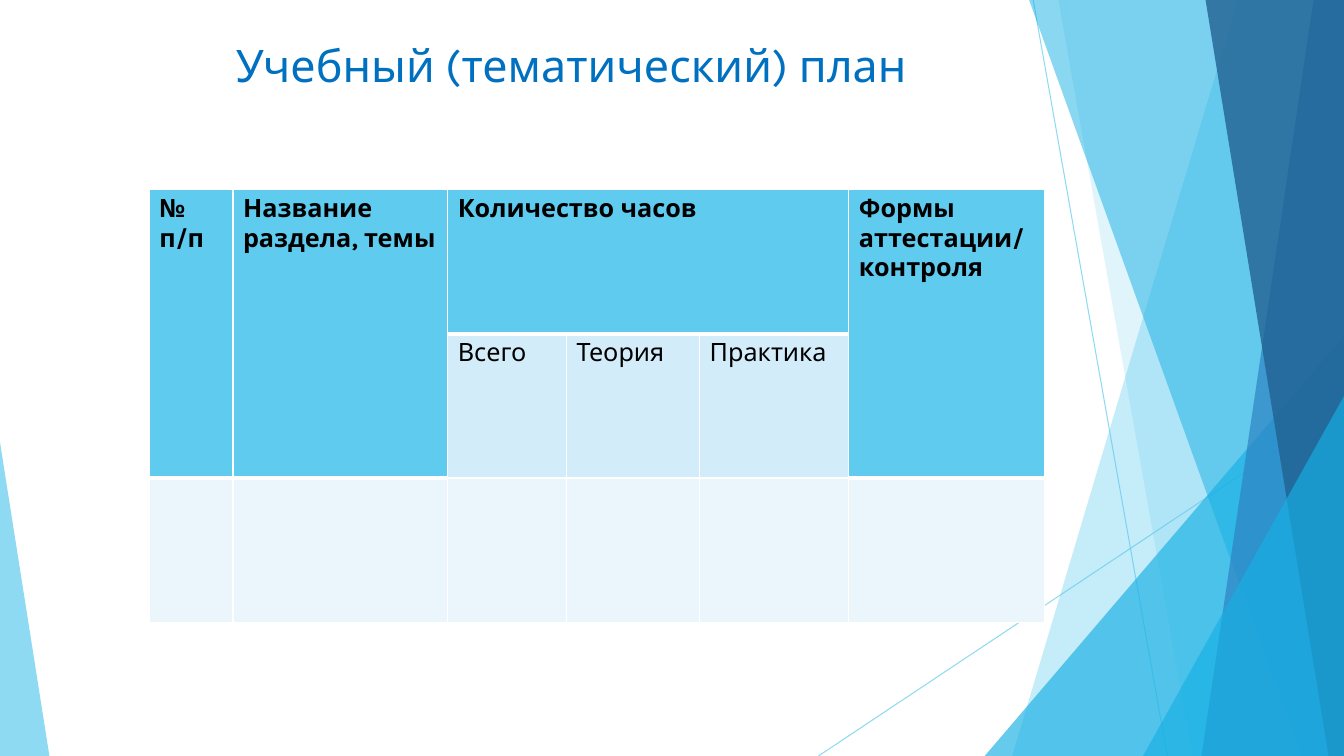
from lxml.etree import SubElement
from pptx import Presentation
from pptx.dml.color import RGBColor
from pptx.enum.shapes import MSO_CONNECTOR, MSO_SHAPE
from pptx.enum.text import PP_ALIGN
from pptx.oxml.ns import qn
from pptx.util import Pt

COLORS = {
    "sky": "5FCBEF", "cyan": "17B0E4", "blue": "2E83C3", "navy": "226292",
    "title": "0070C0", "ink": "000000", "white": "FFFFFF",
    "band": "D2ECF9", "pale": "EAF6FC",
}
WIDE, HIGH = 960, 540


def paint(fill, name, alpha):
    """Give a solid fill whose opacity is alpha percent."""
    fill.solid()
    fill.fore_color.rgb = RGBColor.from_string(COLORS[name])
    tint = fill._xPr.find(qn("a:solidFill"))[0]
    SubElement(tint, qn("a:alpha"), val=str(alpha * 1000))


def write(para, text, look):
    run = para.add_run()
    run.text = text
    run.font.color.rgb = RGBColor.from_string(COLORS[look["color"]])
    for key, value in look["font"].items():
        setattr(run.font, key, value)


deck = Presentation()
deck.slide_width, deck.slide_height = Pt(WIDE), Pt(HIGH)
slide = deck.slides.add_slide(deck.slide_layouts[6])
shapes = slide.shapes

# Thin crossing lines
for ends in [(738, 0, 833.8, HIGH), (WIDE, 290.2, 584.6, HIGH)]:
    line = shapes.add_connector(MSO_CONNECTOR.STRAIGHT, *map(Pt, ends))
    line.line.width = Pt(0.75)
    paint(line.line.fill, "sky", 70)
    SubElement(line._element.spPr, qn("a:effectLst"))

# Facets: a leaf has top and bottom x, a peak has left, top, width and apex
facets = [
    ("leaf", (884.2, 723), "sky", 36),
    ("leaf", (756, 851.8), "sky", 20),
    ("peak", (703.4, 239.8, 256.6, 1), "cyan", 66),
    ("leaf", (735.1, 929.5), "cyan", 50),
    ("leaf", (938.2, 858.2), "blue", 70),
    ("leaf", (861.1, 949), "navy", 80),
    ("peak", (816.5, 283, 143.5, 1), "cyan", 66),
    ("peak", (0, 316, 35.3, 0), "sky", 70),
]
for kind, place, color, alpha in facets:
    if kind == "leaf":
        top, base = place
        path = shapes.build_freeform(Pt(top), 0)
        rest = [(WIDE, 0), (WIDE, HIGH), (base, HIGH)]
        path.add_line_segments([(Pt(x), Pt(y)) for x, y in rest], close=True)
        facet = path.convert_to_shape()
    else:
        left, top, width, apex = place
        facet = shapes.add_shape(MSO_SHAPE.ISOSCELES_TRIANGLE, Pt(left),
                                 Pt(top), Pt(width), Pt(HIGH - top))
        facet.adjustments[0] = apex
    facet.shadow.inherit = False
    facet.line.fill.background()
    paint(facet.fill, color, alpha)

# Title
box = shapes.add_textbox(Pt(65.5), Pt(19.4), Pt(676.8), Pt(108))
box.text_frame.word_wrap = True
para = box.text_frame.paragraphs[0]
para.alignment = PP_ALIGN.CENTER
for text, size in [(" ", 36), ("Учебный (тематический) план", 32)]:
    write(para, text, {"color": "title",
                       "font": {"name": "Karla", "size": Pt(size)}})

# Table of hours
widths = [59.8, 153.4, 85, 95, 106.6, 139.7]
row = 103
rows = [
    ["№ п/п", "Название раздела, темы", "Количество часов", "", "",
     "Формы аттестации/\nконтроля"],
    ["", "", "Всего", "Теория", "Практика", ""],
    [""] * 6,
]
tall = (0, 1, 5)
grid = shapes.add_table(3, 6, Pt(106.6), Pt(135.4),
                        Pt(sum(widths)), Pt(3 * row)).table
for col, width in zip(grid.columns, widths):
    col.width = Pt(width)
for band in grid.rows:
    band.height = Pt(row)

for r, texts in enumerate(rows):
    for c, text in enumerate(texts):
        cell = grid.cell(r, c)
        head = r == 0 or (r == 1 and c in tall)
        below = r == 2 and c in tall or r == 1 and c not in tall
        edges = {"L": 1, "R": 1, "T": 3 if below else 1, "B": 3 if head else 1}
        for side, width in edges.items():
            edge = SubElement(cell._tc.get_or_add_tcPr(), qn("a:ln" + side),
                              w=str(Pt(width)))
            fill = SubElement(edge, qn("a:solidFill"))
            SubElement(fill, qn("a:srgbClr"), val=COLORS["white"])
        paint(cell.fill, "sky" if head else ("band" if r == 1 else "pale"), 100)
        font = {"name": "Karla", "size": Pt(18), "bold": head}
        for i, part in enumerate(text.split("\n") if text else []):
            frame = cell.text_frame
            para = frame.add_paragraph() if i else frame.paragraphs[0]
            write(para, part, {"color": "ink", "font": font})

for c in tall:
    grid.cell(0, c).merge(grid.cell(1, c))
grid.cell(0, 2).merge(grid.cell(0, 4))

deck.save("out.pptx")
